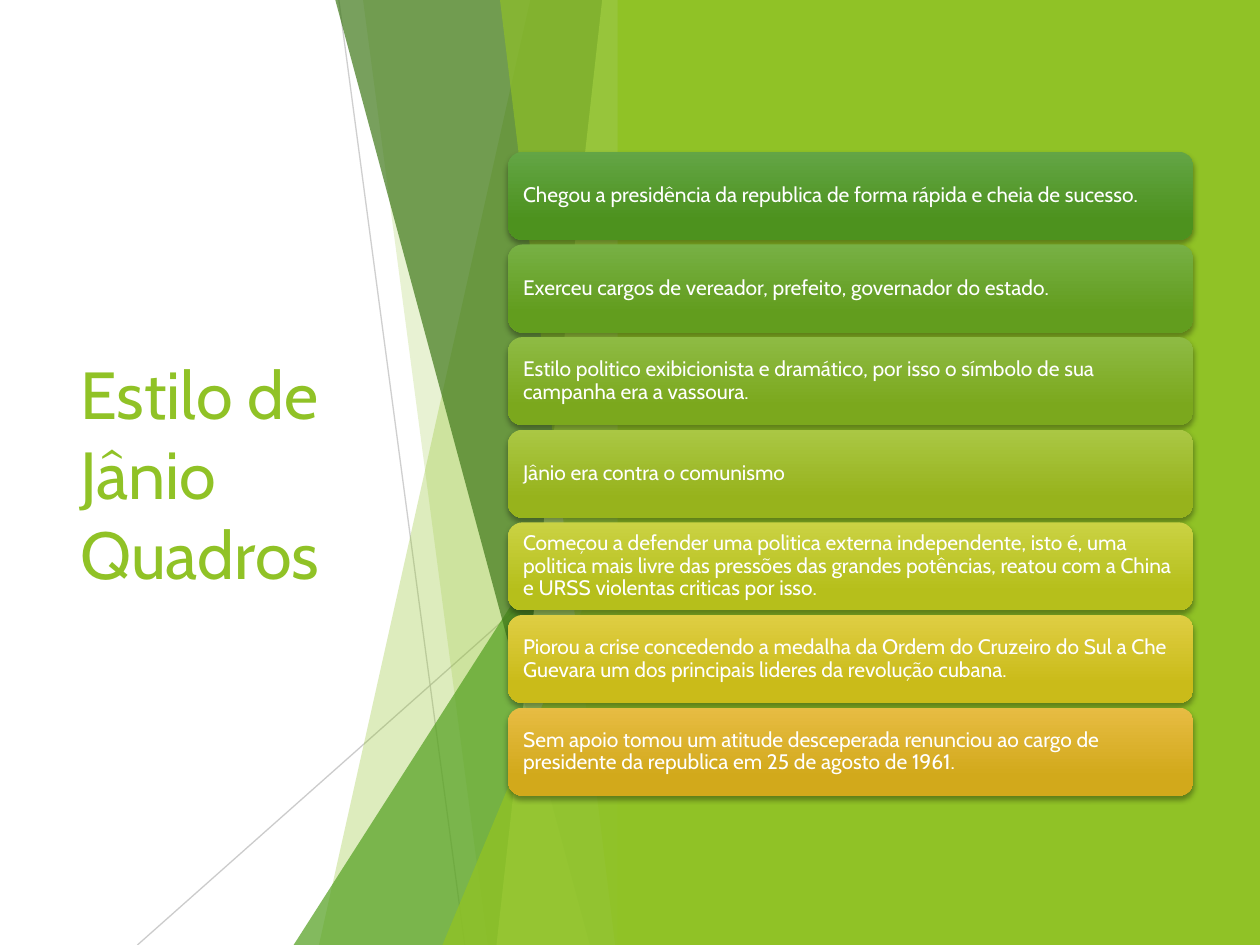
import pptx
import pptx.util
import pptx.dml.color
import pptx.enum.shapes
import pptx.enum.text
import pptx.oxml.ns
import lxml.etree

Cm = pptx.util.Cm
Pt = pptx.util.Pt
KIND = pptx.enum.shapes.MSO_SHAPE
MID = pptx.enum.text.MSO_ANCHOR.MIDDLE
LEFT = pptx.enum.text.PP_ALIGN.LEFT
qn = pptx.oxml.ns.qn

LIME = "90C226"
GREEN = "54A021"
WIDE, HIGH = 25.4, 19.05

# Facets from back to front: shape, two measures, colour, opacity.
# A band has its left edge at the top and the bottom; a wedge has its left and top.
FACETS = [
    ("band", 10.69, 6.43, LIME, 30),
    ("band", 7.32, 9.83, LIME, 20),
    ("wedge", 5.92, 8.46, GREEN, 72),
    ("band", 6.76, 11.89, "3F7819", 70),
    ("band", 12.14, 10.01, "C0E474", 70),
    ("band", 10.08, 12.4, LIME, 65),
    ("wedge", 8.92, 9.98, LIME, 80),
]

# Cards: upper colour, lower colour, wording
CARDS = [
    ("63A545", "4D921E", "Chegou a presidência da republica de forma rápida e cheia de sucesso."),
    ("77B044", "629D1E", "Exerceu cargos de vereador, prefeito, governador do estado."),
    ("8EBB44", "7BA81D", "Estilo politico exibicionista e dramático, por isso o símbolo de sua "
                         "campanha era a vassoura."),
    ("AAC744", "97B31C", "Jânio era contra o comunismo"),
    ("CAD243", "B6BF1B", "Começou a defender uma politica externa independente, isto é, uma "
                         "politica mais livre das pressões das grandes potências, reatou com "
                         "a China e URSS violentas criticas por isso."),
    ("DFCE43", "CABB19", "Piorou a crise concedendo a medalha da Ordem do Cruzeiro do Sul a Che "
                         "Guevara um dos principais lideres da revolução cubana."),
    ("E7BC43", "D2A91B", "Sem apoio tomou um atitude desceperada renunciou ao cargo de "
                         "presidente da republica em 25 de agosto de 1961."),
]


def tint(code):
    return pptx.dml.color.RGBColor.from_string(code)


def fade(part, pct):
    for node in part._element.spPr.iter(qn("a:srgbClr")):
        lxml.etree.SubElement(node, qn("a:alpha"), val=str(pct * 1000))


def paint(part, code, pct=100):
    part.shadow.inherit = False
    part.fill.solid()
    part.fill.fore_color.rgb = tint(code)
    part.line.fill.background()
    if pct < 100:
        fade(part, pct)


def write(part, words, size, code, inset):
    frame = part.text_frame
    frame.word_wrap = True
    frame.vertical_anchor = MID
    frame.margin_left = frame.margin_right = Cm(inset)
    frame.margin_top = frame.margin_bottom = Cm(0.13)
    para = frame.paragraphs[0]
    para.alignment = LEFT
    run = para.add_run()
    run.text = words
    run.font.name = "Cabin"
    run.font.size = Pt(size)
    run.font.color.rgb = tint(code)
    return para


def draw_line(slide, start, end, pct):
    line = slide.shapes.add_connector(
        pptx.enum.shapes.MSO_CONNECTOR.STRAIGHT,
        *[Cm(num) for num in start + end])
    line.line.width = Pt(0.75)
    line.line.color.rgb = tint("BFBFBF")
    fade(line, pct)
    lxml.etree.SubElement(line._element.spPr, qn("a:effectLst"))


def draw_art(slide, left, top, wide, high):
    # Thin lines
    draw_line(slide, (left + 6.83, top), (left + 9.37, top + high), 75)
    draw_line(slide, (left + wide, top + 10.24), (left + 2.77, top + high), 80)
    # Glassy facets
    for kind, one, two, code, pct in FACETS:
        if kind == "band":
            spots = [(wide, 0), (wide, high), (two, high)]
            build = slide.shapes.build_freeform(Cm(left + one), Cm(top))
            build.add_line_segments(
                [(Cm(left + x), Cm(top + y)) for x, y in spots], close=True)
            part = build.convert_to_shape()
        else:
            part = slide.shapes.add_shape(
                KIND.ISOSCELES_TRIANGLE, Cm(left + one), Cm(top + two),
                Cm(wide - one), Cm(high - two))
            part.adjustments[0] = 1
        paint(part, code, pct)


def draw_panel(slide, left, top, wide, high):
    part = slide.shapes.add_shape(
        KIND.RECTANGLE, Cm(left), Cm(top), Cm(wide), Cm(high))
    paint(part, LIME)


def draw_title(slide, left, top, wide, high):
    part = slide.shapes.add_textbox(Cm(left), Cm(top), Cm(wide), Cm(high))
    write(part, "Estilo de Jânio Quadros", 38, LIME, 0.25)


def cast(part):
    part.shadow.inherit = False
    list_ = part._element.spPr.find(qn("a:effectLst"))
    drop = lxml.etree.SubElement(
        list_, qn("a:outerShdw"), blurRad=str(Pt(3)), dist=str(Pt(2)),
        dir="5400000", rotWithShape="0")
    node = lxml.etree.SubElement(drop, qn("a:srgbClr"), val="000000")
    lxml.etree.SubElement(node, qn("a:alpha"), val="35000")


def draw_cards(slide, left, top, wide, high):
    gap = 0.09
    tall = (high - gap * (len(CARDS) - 1)) / len(CARDS)
    for row, (light, dark, words) in enumerate(CARDS):
        card = slide.shapes.add_shape(
            KIND.ROUNDED_RECTANGLE, Cm(left), Cm(top + row * (tall + gap)),
            Cm(wide), Cm(tall))
        card.line.fill.background()
        card.fill.gradient()
        card.fill.gradient_angle = 270
        for stop, code, place in zip(card.fill.gradient_stops, (light, dark), (0, 0.78)):
            stop.color.rgb = tint(code)
            stop.position = place
        cast(card)
        write(card, words, 12, "FFFFFF", 0.22).line_spacing = 0.9


def main():
    deck = pptx.Presentation()
    deck.slide_width, deck.slide_height = Cm(WIDE), Cm(HIGH)
    slide = deck.slides.add_slide(deck.slide_layouts[6])
    draw_title(slide, 1.37, 3.84, 7.39, 11.38)
    draw_art(slide, 0, 0, 12.7, HIGH)
    draw_panel(slide, 12.45, 0, WIDE - 12.45, HIGH)
    draw_cards(slide, 10.24, 3.06, 13.82, 12.98)
    deck.save("out.pptx")


if __name__ == "__main__":
    main()
